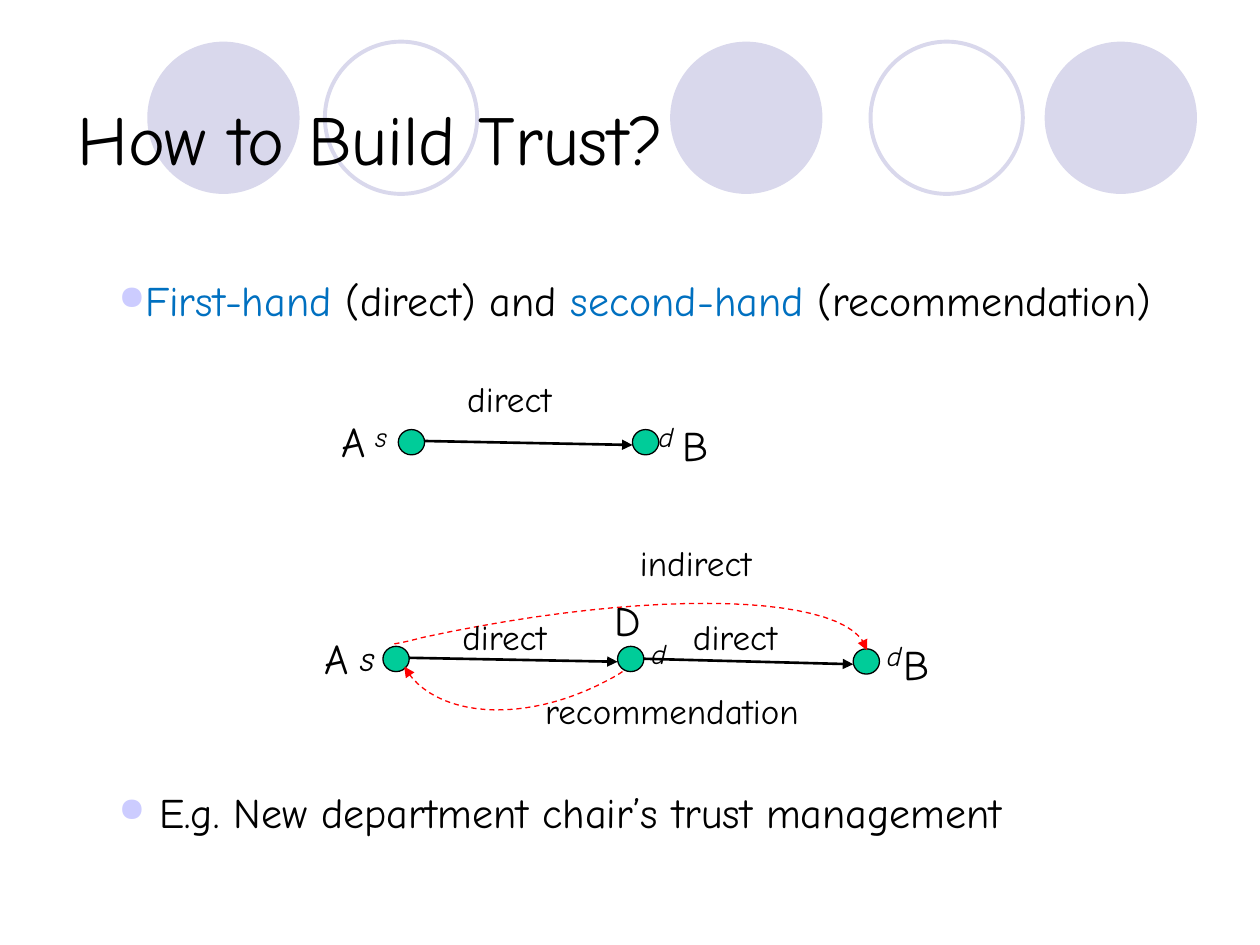
from lxml import etree
from pptx import Presentation
from pptx.dml.color import RGBColor
from pptx.enum.dml import MSO_LINE
from pptx.enum.shapes import MSO_CONNECTOR, MSO_SHAPE
from pptx.enum.text import MSO_ANCHOR
from pptx.oxml.ns import qn
from pptx.util import Cm, Pt

OVAL = MSO_SHAPE.OVAL
STRAIGHT = MSO_CONNECTOR.STRAIGHT
DASH = MSO_LINE.DASH
TOP, MIDDLE = MSO_ANCHOR.TOP, MSO_ANCHOR.MIDDLE

BLACK = RGBColor(0x00, 0x00, 0x00)
BLUE = RGBColor(0x00, 0x70, 0xC0)
GREEN = RGBColor(0x00, 0xCC, 0x99)
RED = RGBColor(0xFF, 0x00, 0x00)
LAVENDER = RGBColor(0xD9, 0xD8, 0xEC)
BULLET_COLOR = "CCCCFF"

CURVE_STEPS = 24


def bezier(start, control_1, control_2, end):
    """Points along a cubic curve, without its start."""
    points = []
    for step in range(1, CURVE_STEPS + 1):
        t = step / CURVE_STEPS
        u = 1 - t
        weights = (u ** 3, 3 * u * u * t, 3 * u * t * t, t ** 3)
        corners = (start, control_1, control_2, end)
        points.append(tuple(sum(w * c[axis] for w, c in zip(weights, corners))
                            for axis in (0, 1)))
    return points


class SlideBuilder:
    font = "Comic Neue"
    inset = Cm(0.25)

    def __init__(self, slide):
        self.slide = slide
        self.shapes = slide.shapes

    def circle(self, left, top, width, height, fill=None, line=None, weight=0.75):
        shape = self.shapes.add_shape(OVAL, Cm(left), Cm(top), Cm(width), Cm(height))
        shape.shadow.inherit = False
        if fill is None:
            shape.fill.background()
        else:
            shape.fill.solid()
            shape.fill.fore_color.rgb = fill
        if line is None:
            shape.line.fill.background()
        else:
            shape.line.color.rgb = line
            shape.line.width = Pt(weight)

    def node(self, left, top):
        self.circle(left, top, 0.53, 0.51, GREEN, BLACK)

    def text_box(self, left, top, width, height, anchor=TOP, inset=None):
        box = self.shapes.add_textbox(Cm(left), Cm(top), Cm(width), Cm(height))
        settings = {"word_wrap": True, "vertical_anchor": anchor}
        if inset is not None:
            settings.update(margin_top=inset, margin_bottom=inset)
        for name, value in settings.items():
            setattr(box.text_frame, name, value)
        return box.text_frame

    def run(self, paragraph, text, size, color=BLACK, italic=False):
        run = paragraph.add_run()
        run.text = text
        style = {"name": self.font, "size": Pt(size), "italic": italic}
        for name, value in style.items():
            setattr(run.font, name, value)
        run.font.color.rgb = color

    def label(self, text, left, top, width, height=1.12, size=20, italic=False):
        frame = self.text_box(left, top, width, height)
        self.run(frame.paragraphs[0], text, size, italic=italic)

    def title(self, text, *box):
        frame = self.text_box(*box, anchor=MIDDLE, inset=self.inset)
        self.run(frame.paragraphs[0], text, 40)

    def bullets(self, items, *box):
        """Each item is (space before in points, [(text, color), ...])."""
        frame = self.text_box(*box, inset=self.inset)
        for index, (space, runs) in enumerate(items):
            paragraph = frame.add_paragraph() if index else frame.paragraphs[0]
            paragraph.space_before = Pt(space)
            for text, color in runs:
                self.run(paragraph, text, 24, color)
            properties = paragraph._p.get_or_add_pPr()
            properties.set("marL", str(Cm(0.94)))
            properties.set("indent", str(Cm(0.36)))
            bullet_color = etree.SubElement(properties, qn("a:buClr"))
            etree.SubElement(bullet_color, qn("a:srgbClr"), val=BULLET_COLOR)
            etree.SubElement(properties, qn("a:buSzPct"), val="80000")
            etree.SubElement(properties, qn("a:buChar"), char="●")

    def arrowhead(self, shape):
        line = shape.line._get_or_add_ln()
        etree.SubElement(line, qn("a:tailEnd"), type="triangle")

    def arrow(self, x1, y1, x2, y2):
        connector = self.shapes.add_connector(STRAIGHT, Cm(x1), Cm(y1), Cm(x2), Cm(y2))
        connector.line.color.rgb = BLACK
        connector.line.width = Pt(1.5)
        self.arrowhead(connector)
        etree.SubElement(connector._element.spPr, qn("a:effectLst"))

    def curved_arrow(self, start, *segments):
        points = []
        corner = start
        for segment in segments:
            points += bezier(corner, *segment)
            corner = segment[-1]
        builder = self.shapes.build_freeform(Cm(start[0]), Cm(start[1]))
        builder.add_line_segments([(Cm(x), Cm(y)) for x, y in points], close=False)
        shape = builder.convert_to_shape()
        shape.shadow.inherit = False
        shape.fill.background()
        shape.line.color.rgb = RED
        shape.line.width = Pt(0.75)
        shape.line.dash_style = DASH
        self.arrowhead(shape)


def main():
    presentation = Presentation()
    presentation.slide_width = Cm(25.4)
    presentation.slide_height = Cm(19.05)
    builder = SlideBuilder(presentation.slides.add_slide(presentation.slide_layouts[6]))

    # Background circles
    for left in (2.97, 13.51, 21.06):
        builder.circle(left, 0.84, 3.07, 3.07, fill=LAVENDER)
    for left in (6.55, 17.55):
        builder.circle(left, 0.84, 3.07, 3.07, line=LAVENDER, weight=2.25)

    # Title and bullets
    builder.title("How to Build Trust?", 1.32, 1.8, 22.68, 1.96)
    builder.bullets([
        (0, [("First-hand", BLUE), (" (direct) and ", BLACK),
             ("second-hand", BLUE), (" (recommendation)", BLACK)]),
        (264, [(" E.g. New department chair’s trust management", BLACK)]),
    ], 0.84, 5.28, 24.13, 7.42)

    # Arrows of direct trust
    for ends in ((8.56, 8.89, 12.75, 8.97), (8.23, 13.26, 12.45, 13.34),
                 (12.98, 13.28, 17.2, 13.39)):
        builder.arrow(*ends)

    # Nodes
    for left, top in ((8.03, 8.66), (12.75, 8.66),
                      (7.72, 13.03), (12.45, 13.03), (17.2, 13.08)):
        builder.node(left, top)

    # Names of the parties
    for name, left, top in (("A", 6.63, 8.26), ("B", 13.51, 8.33), ("A", 6.3, 12.62),
                            ("D", 12.14, 11.86), ("B", 17.96, 12.75)):
        builder.label(name, left, top, 1.57, 1.27, size=24)

    # Source and destination marks
    for mark, left, top, size in (("s", 7.32, 8.33, 16), ("d", 13.03, 8.33, 16),
                                  ("s", 7.01, 12.7, 20), ("d", 12.88, 12.7, 16),
                                  ("d", 17.63, 12.75, 16)):
        builder.label(mark, left, top, 0.86, 0.94, size=size, italic=True)

    # Recommendation and indirect trust
    builder.curved_arrow((12.55, 13.54),
                         ((12.45, 13.61), (12.34, 13.67), (12.24, 13.72)),
                         ((10.57, 14.61), (8.74, 14.48), (8.15, 13.44)))
    builder.curved_arrow((7.95, 12.98),
                         ((8.15, 12.95), (8.33, 12.9), (8.53, 12.85)),
                         ((13.18, 11.84), (17.2, 11.96), (17.48, 13.11)))

    # Kinds of trust
    for text, left, top, width in (("direct", 9.17, 7.49, 3.18),
                                   ("direct", 9.07, 12.29, 3.18),
                                   ("direct", 13.72, 12.29, 3.18),
                                   ("indirect", 12.65, 10.8, 4.24),
                                   ("recommendation", 10.74, 13.77, 7.19)):
        builder.label(text, left, top, width)

    presentation.save("out.pptx")


if __name__ == "__main__":
    main()
